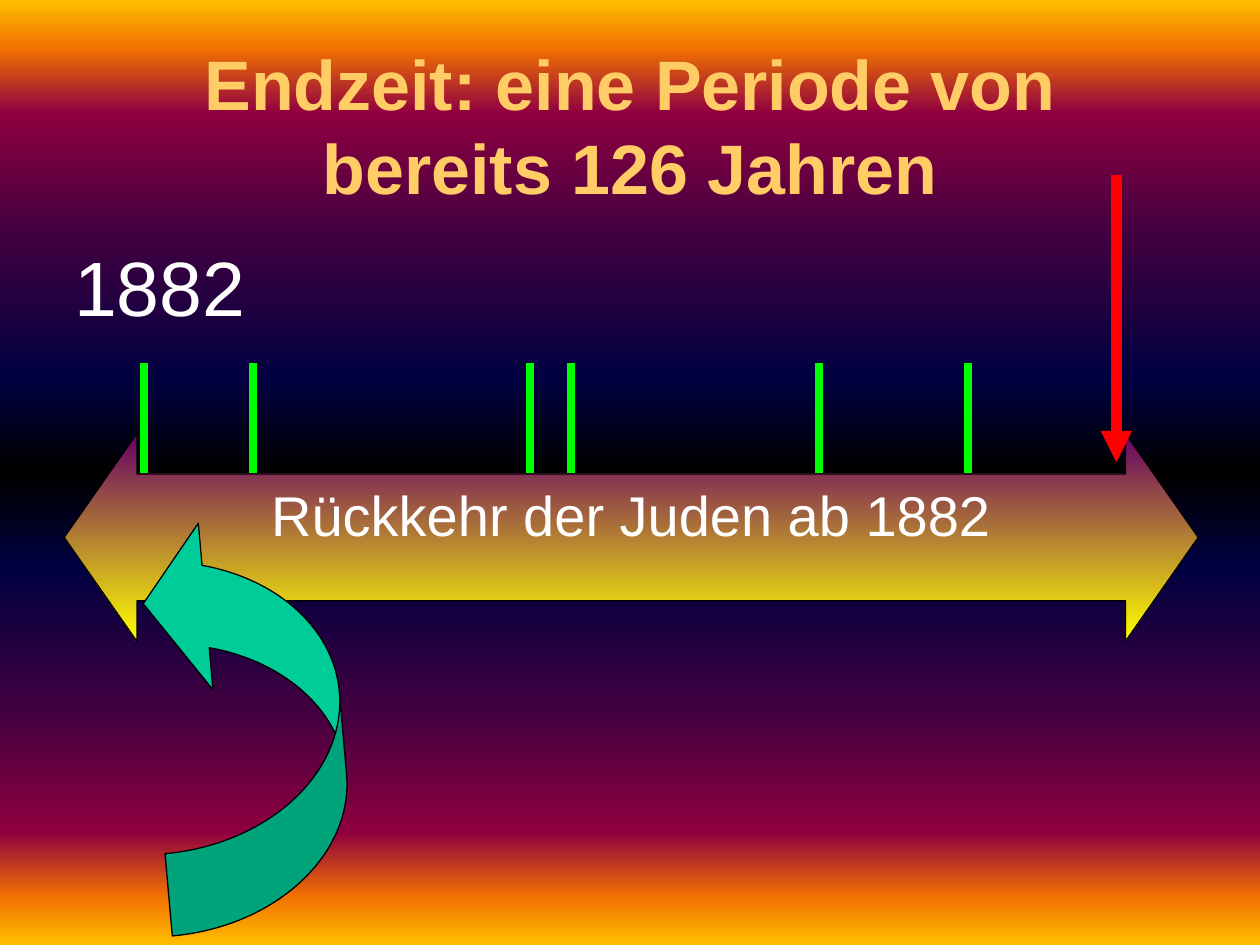
from lxml import etree
from pptx import Presentation
from pptx import util as u
from pptx.dml.color import RGBColor
from pptx.enum import shapes, text
from pptx.oxml.ns import qn

WHITE = RGBColor(0xFF, 0xFF, 0xFF)
BLACK = RGBColor(0, 0, 0)
GOLD = RGBColor(0xFF, 0xCC, 0x66)
RED = RGBColor(0xFF, 0, 0)
GREEN = RGBColor(0, 0xFF, 0)
TEAL = RGBColor(0, 0xCC, 0x99)
PURPLE = RGBColor(0x66, 0, 0x66)
YELLOW = RGBColor(0xFF, 0xFF, 0)
AMBER = RGBColor(0xFF, 0xBF, 0)
ORANGE = RGBColor(0xF2, 0x73, 0)
CRIMSON = RGBColor(0x8F, 0, 0x40)
PLUM = RGBColor(0x40, 0, 0x40)
NAVY = RGBColor(0, 0, 0x40)

prs = Presentation()
prs.slide_width, prs.slide_height = u.Inches(10), u.Inches(7.5)
s = prs.slides.add_slide(prs.slide_layouts[5])


def set_gradient(fill, element, stops):
    """Fill from top to bottom with (percent, colour) stops."""
    fill.gradient()
    fill.gradient_angle = 270
    gs_list = element.find(".//" + qn("a:gsLst"))
    for gs in list(gs_list):
        gs_list.remove(gs)
    for pos, color in stops:
        gs = etree.SubElement(gs_list, qn("a:gs"), pos=str(pos * 1000))
        etree.SubElement(gs, qn("a:srgbClr"), val=str(color))


def add_line(x, top, bottom, color, width):
    line = s.shapes.add_connector(shapes.MSO_CONNECTOR.STRAIGHT, u.Inches(x),
                                  u.Inches(top), u.Inches(x), u.Inches(bottom))
    line.line.color.rgb = color
    line.line.width = u.Pt(width)
    etree.SubElement(line._element.spPr, qn("a:effectLst"))
    return line


# Background: the same colours run outwards from the black middle
half = [(0, AMBER), (5, ORANGE), (12, CRIMSON), (25, PLUM), (40, NAVY)]
mirrored = [(100 - pos, color) for pos, color in reversed(half)]
set_gradient(s.background.fill, s._element, half + [(50, BLACK)] + mirrored)

# Title
title = s.shapes.title
title.left, title.top = u.Inches(0.75), u.Inches(0.21)
title.width, title.height = u.Inches(8.5), u.Inches(1.55)
title.text_frame.vertical_anchor = text.MSO_ANCHOR.MIDDLE

# Time bar
bar = s.shapes.add_shape(shapes.MSO_SHAPE.LEFT_RIGHT_ARROW, u.Inches(0.51),
                         u.Inches(3.44), u.Inches(9), u.Inches(1.65))
bar.adjustments[0], bar.adjustments[1] = 0.61, 0.35
set_gradient(bar.fill, bar._element, [(0, PURPLE), (100, YELLOW)])
bar.text_frame.vertical_anchor = text.MSO_ANCHOR.TOP

# Curved arrow back to the start
curve = s.shapes.add_shape(shapes.MSO_SHAPE.CURVED_LEFT_ARROW, u.Inches(1.22),
                           u.Inches(4.06), u.Inches(1.49), u.Inches(3.31))
for i, value in enumerate((0.44, 0.89, 0.33)):
    curve.adjustments[i] = value
curve.rotation = 355
curve._element.spPr.find(qn("a:xfrm")).set("flipV", "1")
curve.fill.solid()
curve.fill.fore_color.rgb = TEAL

for sp in (bar, curve):
    sp.shadow.inherit = False
    sp.line.color.rgb = BLACK
    sp.line.width = u.Pt(0.75)

# Present-day pointer and year marks
pointer = add_line(8.86, 1.39, 3.67, RED, 6)
etree.SubElement(pointer.line._get_or_add_ln(), qn("a:tailEnd"), type="triangle")
for x in (1.14, 2.01, 4.21, 4.53, 6.5, 7.68):
    add_line(x, 2.88, 3.75, GREEN, 4.5)

# Start year
year = s.shapes.add_textbox(u.Inches(0.49), u.Inches(1.85),
                            u.Inches(1.56), u.Inches(0.83))
year.text_frame.word_wrap = False
year.text_frame.auto_size = text.MSO_AUTO_SIZE.SHAPE_TO_FIT_TEXT

# Wording
for sp, words, size, color, bold, align in (
    (title, "Endzeit: eine Periode von bereits 126 Jahren", 40, GOLD, True,
     text.PP_ALIGN.CENTER),
    (bar, "Rückkehr der Juden ab 1882", 32, WHITE, False, text.PP_ALIGN.CENTER),
    (year, "1882", 44, WHITE, False, text.PP_ALIGN.LEFT),
):
    p = sp.text_frame.paragraphs[0]
    p.alignment = align
    r = p.add_run()
    r.text = words
    r.font.name, r.font.size, r.font.bold = "Arial", u.Pt(size), bold
    r.font.color.rgb = color

prs.save("out.pptx")
